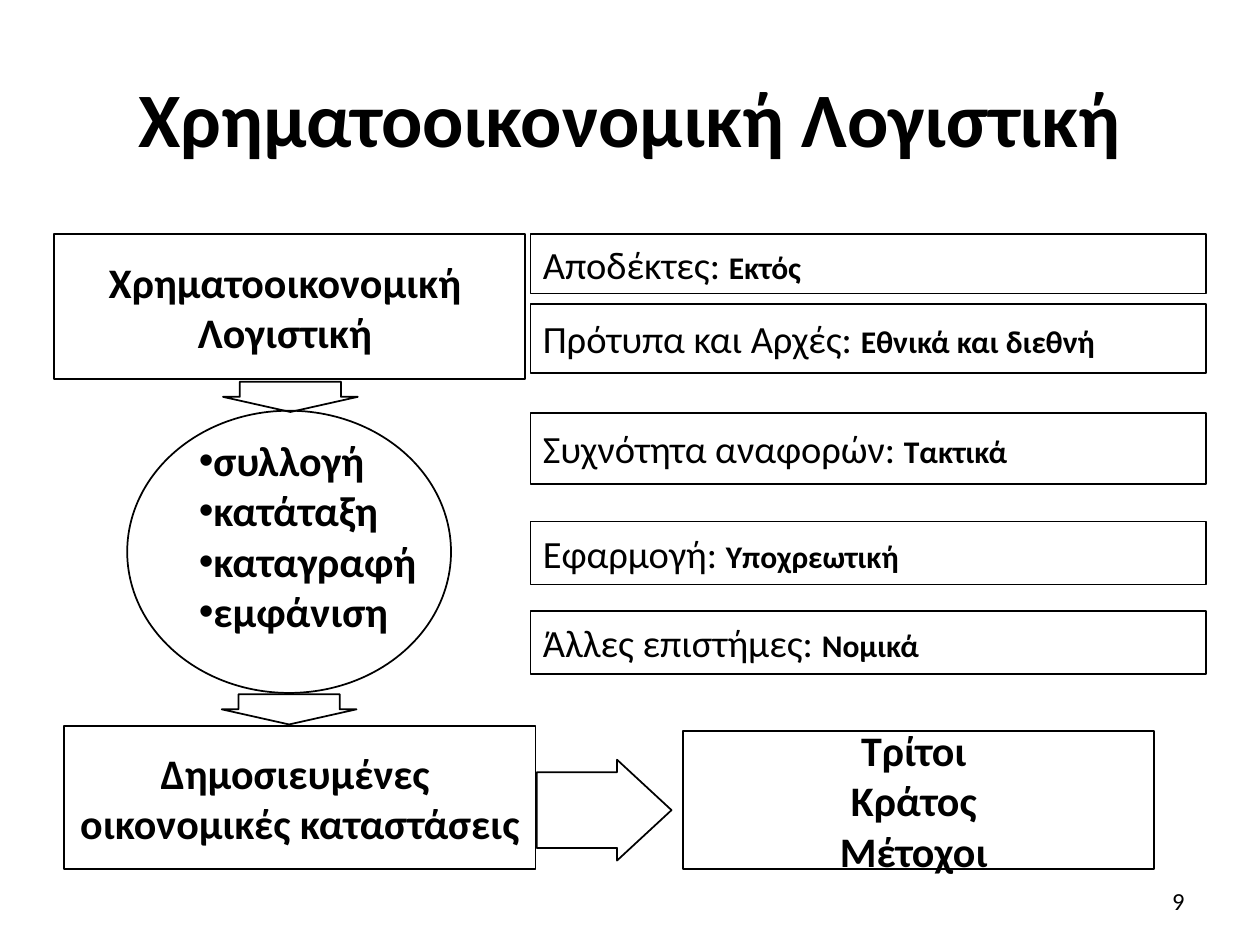
from lxml import etree
from pptx import Presentation
from pptx.dml.color import RGBColor
from pptx.enum.shapes import MSO_SHAPE as SHAPE
from pptx.enum.text import MSO_ANCHOR as ANCHOR, PP_ALIGN as ALIGN
from pptx.oxml.ns import qn
from pptx.util import Inches, Pt

COLORS = {"ink": "000000", "paper": "FFFFFF"}
FONT = "Calibri"
STEP_WIDTH = 3.74
ARROW_WIDTH = 1.07

CRITERIA = [
    ("Αποδέκτες: ", "Εκτός", 0, 0.47),
    ("Πρότυπα και Αρχές: ", "Εθνικά και διεθνή", 0.55, 0.55),
    ("Συχνότητα αναφορών: ", "Τακτικά", 1.42, 0.56),
    ("Εφαρμογή: ", "Υποχρεωτική", 2.28, 0.5),
    ("Άλλες επιστήμες: ", "Νομικά", 2.99, 0.5),
]


def style(font, size, bold=False):
    font.name = FONT
    font.size = Pt(size)
    font.bold = bold
    font.color.rgb = RGBColor.from_string(COLORS["ink"])


def add_outline(slide, kind, left, top, width, height, adjustments=()):
    outline = slide.shapes.add_shape(
        kind, Inches(left), Inches(top), Inches(width), Inches(height))
    outline.shadow.inherit = False
    outline.fill.background()
    outline.line.color.rgb = RGBColor.from_string(COLORS["ink"])
    outline.line.width = Pt(1)
    for index, value in enumerate(adjustments):
        outline.adjustments[index] = value
    frame = outline.text_frame
    frame.word_wrap = False
    frame.vertical_anchor = ANCHOR.MIDDLE
    return outline


def add_text(slide, left, top, width, height):
    frame = slide.shapes.add_textbox(
        Inches(left), Inches(top), Inches(width), Inches(height)).text_frame
    return frame


def add_step(slide, lines, left, top, height):
    frame = add_outline(
        slide, SHAPE.RECTANGLE, left, top, STEP_WIDTH, height).text_frame
    frame.text = "\n".join(lines)
    for paragraph in frame.paragraphs:
        paragraph.alignment = ALIGN.CENTER
        for run in paragraph.runs:
            style(run.font, 24, True)


def add_tasks(slide, tasks, left, top, width, height):
    frame = add_text(slide, left + 0.47, top + 0.14, 2.07, 1.7)
    frame.word_wrap = False
    frame.text = "\n".join(tasks)
    for paragraph in frame.paragraphs:
        properties = paragraph._p.get_or_add_pPr()
        properties.set("marL", "0")
        properties.set("indent", "0")
        etree.SubElement(properties, qn("a:buFont")).set("typeface", "Arial")
        etree.SubElement(properties, qn("a:buChar")).set("char", "•")
        for run in paragraph.runs:
            style(run.font, 24, True)
    add_outline(slide, SHAPE.OVAL, left, top, width, height)


def add_process(slide, left, top):
    add_step(slide, ["Χρηματοοικονομική ", "Λογιστική "], left, top, 1.15)
    for arrow_left, arrow_top in ((1.34, 1.17), (1.33, 3.65)):
        add_outline(slide, SHAPE.DOWN_ARROW, left + arrow_left,
                    top + arrow_top, ARROW_WIDTH, 0.24, (0.75, 0.5))
    add_tasks(slide, ["συλλογή", "κατάταξη", "καταγραφή", "εμφάνιση"],
              left + 0.58, top + 1.4, 2.57, 2.24)


def add_reporting(slide, left, top):
    add_step(slide, ["Δημοσιευμένες ", "οικονομικές καταστάσεις"],
             left, top, 1.14)
    add_outline(slide, SHAPE.RIGHT_ARROW, left + STEP_WIDTH + 0.01,
                top + 0.27, ARROW_WIDTH, 0.8, (0.75, 0.54))
    add_step(slide, ["Τρίτοι ", "Κράτος ", "Μέτοχοι "],
             left + 4.91, top + 0.04, 1.1)


def add_criteria(slide, left, top, width):
    for label, answer, offset, height in CRITERIA:
        frame = add_outline(slide, SHAPE.RECTANGLE, left, top + offset,
                            width, height).text_frame
        paragraph = frame.paragraphs[0]
        paragraph.alignment = ALIGN.LEFT
        for words, size, bold in ((label, 22, False), (answer, 18, True)):
            run = paragraph.add_run()
            run.text = words
            style(run.font, size, bold)


def add_title(slide, left, top, width, height):
    title = slide.shapes.title
    title.left, title.top = Inches(left), Inches(top)
    title.width, title.height = Inches(width), Inches(height)
    frame = title.text_frame
    frame.text = "Χρηματοοικονομική Λογιστική"
    frame.vertical_anchor = ANCHOR.MIDDLE
    heading = frame.paragraphs[0]
    heading.alignment = ALIGN.CENTER
    style(heading.runs[0].font, 44, True)


def add_page_number(slide, left, top, width, height):
    frame = add_text(slide, left, top, width, height)
    frame.word_wrap = True
    frame.vertical_anchor = ANCHOR.MIDDLE
    frame.text = "9"
    number = frame.paragraphs[0]
    number.alignment = ALIGN.RIGHT
    style(number.runs[0].font, 14)


def main():
    prs = Presentation()
    prs.slide_width, prs.slide_height = Inches(10), Inches(7.5)
    slide = prs.slides.add_slide(prs.slide_layouts[5])
    background = slide.background.fill
    background.solid()
    background.fore_color.rgb = RGBColor.from_string(COLORS["paper"])
    add_title(slide, 0.5, 0.3, 9, 1.25)
    add_process(slide, 0.43, 1.86)
    add_reporting(slide, 0.51, 5.76)
    add_criteria(slide, 4.21, 1.86, 5.36)
    add_page_number(slide, 7.17, 6.95, 2.33, 0.4)
    prs.save("out.pptx")


if __name__ == "__main__":
    main()
